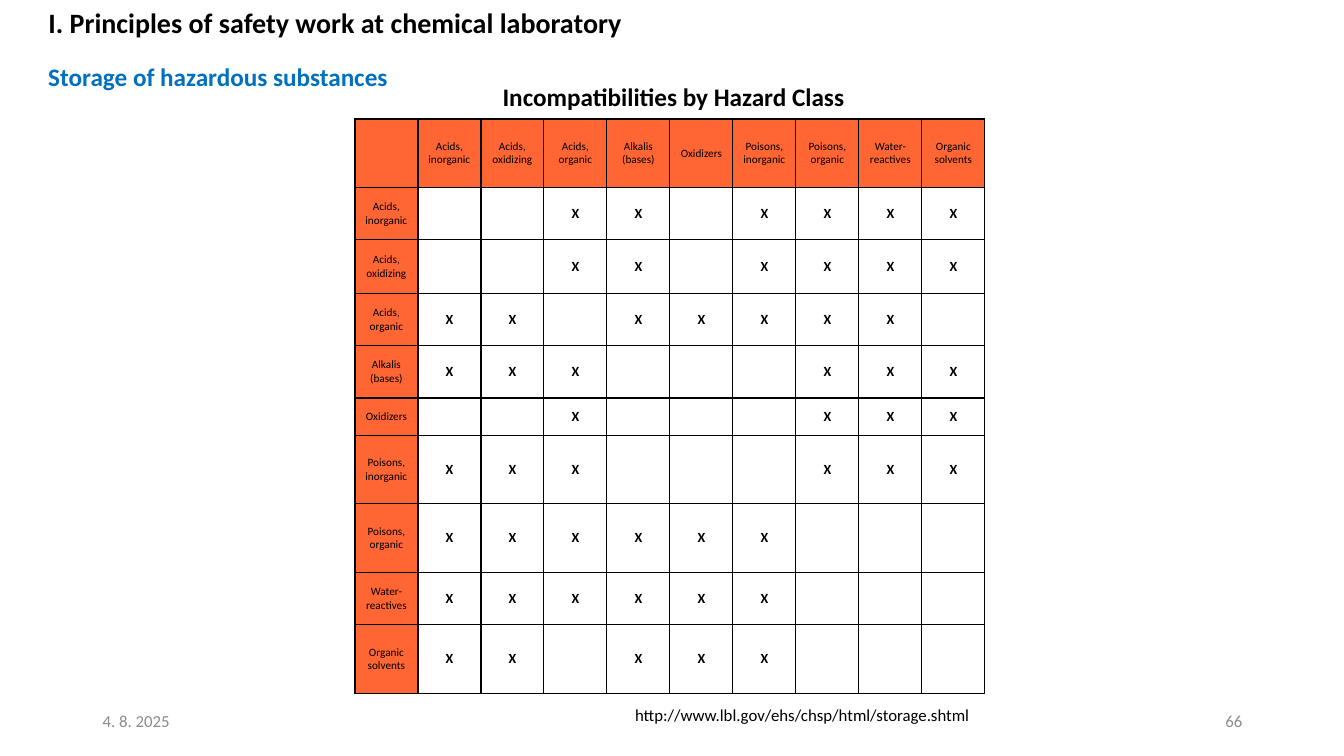
from dataclasses import dataclass

from lxml.etree import SubElement as Sub
from pptx import Presentation
from pptx.dml.color import RGBColor as Rgb
from pptx.enum.text import MSO_ANCHOR as Anchor
from pptx.enum.text import MSO_AUTO_SIZE as Fit
from pptx.enum.text import PP_ALIGN as Align
from pptx.oxml.ns import qn
from pptx.slide import Slide
from pptx.table import _Cell as Cell
from pptx.text.text import TextFrame as Frame
from pptx.util import Inches, Pt


@dataclass(frozen=True)
class Theme:
    font: str = "Calibri"
    ink: str = "000000"
    blue: str = "0070C0"
    gray: str = "8C8C8C"
    head: str = "FF6633"
    page: str = "FFFFFF"
    title: int = 20
    sub: int = 18
    note: int = 12
    mark: int = 10
    label: int = 8


@dataclass(frozen=True)
class Label:
    text: str
    left: float
    top: float
    width: float
    height: float
    size: int
    color: str
    bold: bool = False
    align: Align = Align.LEFT
    anchor: Anchor = Anchor.TOP
    wrap: bool = True


@dataclass(frozen=True)
class Row:
    name: str
    marks: str
    height: float


THEME = Theme()

TITLE = Label("I. Principles of safety work at chemical laboratory", 0.38, 0, 5.94, 0.44,
              THEME.title, THEME.ink, bold=True, align=Align.JUSTIFY, wrap=False)

LABELS = [
    Label("Incompatibilities by Hazard Class", 4.64, 0.76, 4.08, 0.4,
          THEME.sub, THEME.ink, bold=True, align=Align.CENTER),
    Label("http://www.lbl.gov/ehs/chsp/html/storage.shtml", 6.2, 6.94, 3.62, 0.3,
          THEME.note, THEME.ink),
    Label("4. 8. 2025", 0.92, 6.95, 3, 0.4, THEME.note, THEME.gray, anchor=Anchor.MIDDLE),
    Label("66", 9.42, 6.95, 3, 0.4, THEME.note, THEME.gray,
          align=Align.RIGHT, anchor=Anchor.MIDDLE),
    Label("Storage of hazardous substances", 0.38, 0.56, 3.6, 0.4,
          THEME.sub, THEME.blue, bold=True, wrap=False),
]

ROWS = [
    Row("Acids, inorganic", "..XX.XXXX", 0.52),
    Row("Acids, oxidizing", "..XX.XXXX", 0.53),
    Row("Acids, organic", "XX.XXXXX.", 0.52),
    Row("Alkalis (bases)", "XXX...XXX", 0.52),
    Row("Oxidizers", "..X...XXX", 0.37),
    Row("Poisons, inorganic", "XXX...XXX", 0.68),
    Row("Poisons, organic", "XXXXXX...", 0.68),
    Row("Water- reactives", "XXXXXX...", 0.52),
    Row("Organic solvents", "XX.XXX...", 0.68),
]
TOP_ROW = 0.68
LEFT, TOP, WIDTH = 3.52, 1.18, 6.25


def write(frame: Frame, text: str, *, size: int, color: str = THEME.ink,
          bold: bool = False, align: Align = Align.CENTER) -> None:
    para = frame.paragraphs[0]
    para.alignment = align
    run = para.add_run()
    run.text = text
    font = run.font
    font.name, font.size, font.bold = THEME.font, Pt(size), bold
    font.color.rgb = Rgb.from_string(color)


def place(shape, label: Label) -> None:
    shape.left, shape.top = Inches(label.left), Inches(label.top)
    shape.width, shape.height = Inches(label.width), Inches(label.height)
    frame = shape.text_frame
    frame.word_wrap = label.wrap
    frame.auto_size = Fit.NONE
    frame.vertical_anchor = label.anchor
    write(frame, label.text, size=label.size, color=label.color,
          bold=label.bold, align=label.align)


def border(cell: Cell) -> None:
    props = cell._tc.get_or_add_tcPr()
    for index, side in enumerate(("lnL", "lnR", "lnT", "lnB")):
        line = props.makeelement(qn(f"a:{side}"), {"w": str(Pt(1))})
        fill = Sub(line, qn("a:solidFill"))
        Sub(fill, qn("a:srgbClr"), val=THEME.ink)
        props.insert(index, line)


def style(cell: Cell, color: str) -> None:
    cell.margin_left = cell.margin_right = Inches(0.05)
    cell.margin_top = cell.margin_bottom = Inches(0.02)
    cell.vertical_anchor = Anchor.MIDDLE
    cell.fill.solid()
    cell.fill.fore_color.rgb = Rgb.from_string(color)
    border(cell)


def draw_grid(slide: Slide) -> None:
    high = [TOP_ROW] + [row.height for row in ROWS]
    count = len(high)
    grid = slide.shapes.add_table(count, count, Inches(LEFT), Inches(TOP),
                                  Inches(WIDTH), Inches(sum(high))).table
    grid.first_row = grid.horz_banding = False
    for col in grid.columns:
        col.width = Inches(WIDTH / count)
    for line, height in zip(grid.rows, high):
        line.height = Inches(height)

    names = [""] + [row.name for row in ROWS]
    lines = [names] + [[row.name, *row.marks.replace(".", " ")] for row in ROWS]
    for y, line in enumerate(lines):
        for x, text in enumerate(line):
            cell = grid.cell(y, x)
            head = x == 0 or y == 0
            style(cell, THEME.head if head else THEME.page)
            if text.strip():
                write(cell.text_frame, text, bold=not head,
                      size=THEME.label if head else THEME.mark)


def main() -> None:
    deck = Presentation()
    deck.slide_width, deck.slide_height = Inches(13.33), Inches(7.5)
    slide = deck.slides.add_slide(deck.slide_layouts[5])
    draw_grid(slide)
    place(slide.shapes.title, TITLE)
    for label in LABELS:
        box = slide.shapes.add_textbox(0, 0, 0, 0)
        place(box, label)
    deck.save("out.pptx")


if __name__ == "__main__":
    main()
